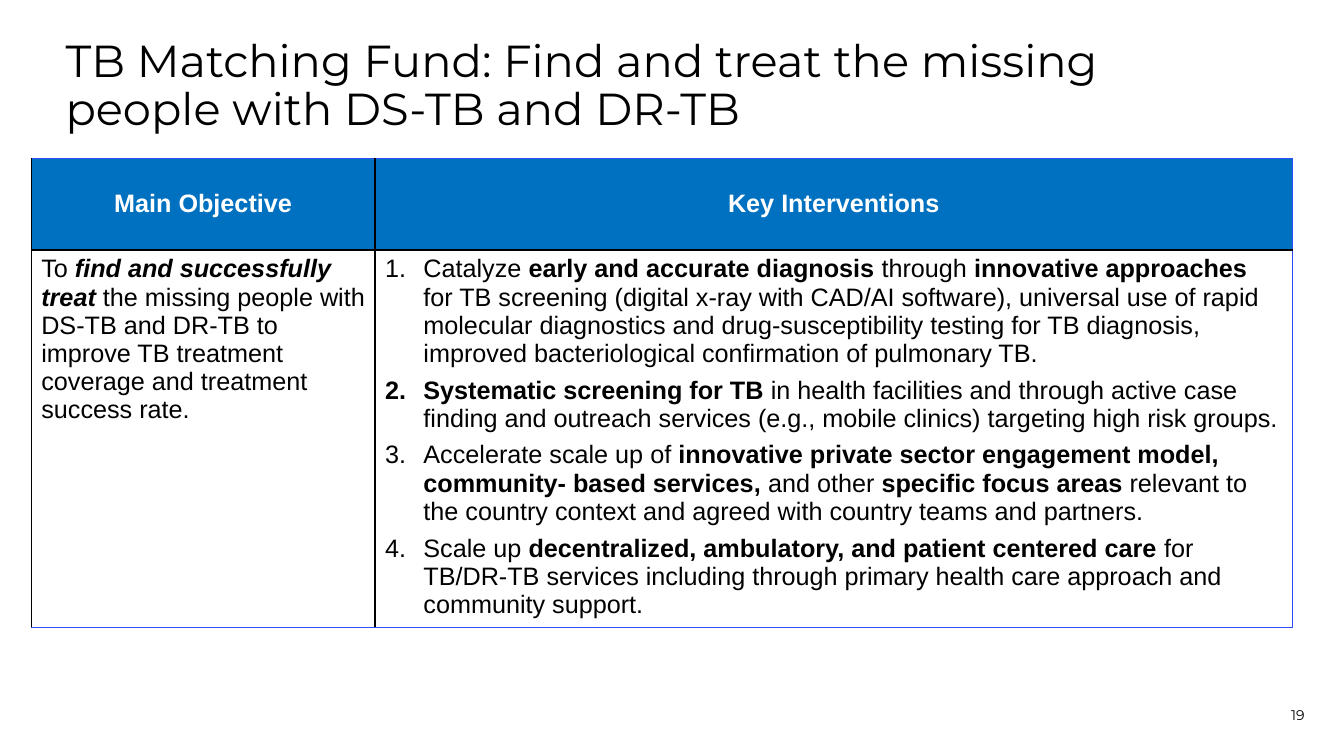
from dataclasses import dataclass

from lxml import etree
from pptx import Presentation
from pptx.dml.color import RGBColor
from pptx.enum import text as tx
from pptx.oxml import ns
from pptx.util import Inches, Pt

HUES = {"black": "000000", "white": "FFFFFF", "head": "0070C0", "edge": "2E4DF9"}
COLS = (3.41, 9.1)
ROWS = (0.91, 3.74)
SIDES = ("lnL", "lnR", "lnT", "lnB")


@dataclass
class Entry:
    row: int
    col: int
    lines: tuple[str, ...]
    edges: tuple[str, str, str, str]
    head: bool = False
    slant: bool = False
    listed: bool = False


ENTRIES = (
    Entry(0, 0, ("|Main Objective",), ("black", "black", "edge", "black"), head=True),
    Entry(0, 1, ("|Key Interventions",), ("black", "edge", "edge", "black"), head=True),
    Entry(1, 0, (
        "To |find and successfully treat |the missing people with DS-TB and DR-TB "
        "to improve TB treatment coverage and treatment success rate.",
    ), ("black", "black", "black", "edge"), slant=True),
    Entry(1, 1, (
        "Catalyze |early and accurate diagnosis |through |innovative approaches| for TB "
        "screening (digital x-ray with CAD/AI software), universal use of rapid molecular "
        "diagnostics and drug-susceptibility testing for TB diagnosis, improved "
        "bacteriological confirmation of pulmonary TB.",
        "|Systematic screening for TB |in health facilities and through active case finding "
        "and outreach services (e.g., mobile clinics) targeting high risk groups.",
        "Accelerate scale up of |innovative private sector engagement model, community- "
        "based services, |and other |specific focus areas |relevant to the country context "
        "and agreed with country teams and partners.",
        "Scale up |decentralized, ambulatory, and patient centered care |for TB/DR-TB "
        "services including through primary health care approach and community support.",
    ), ("black", "edge", "black", "edge"), listed=True),
)


def write(para, words: str, *, size: float = 18, face: str = "Arial", hue: str = "black",
          align=tx.PP_ALIGN.LEFT, slant: bool = False) -> None:
    para.alignment = align
    for spot, part in enumerate(words.split("|")):
        if part:
            run = para.add_run()
            run.text = part
            font = run.font
            font.name, font.size = face, Pt(size)
            font.color.rgb = RGBColor.from_string(HUES[hue])
            font.bold = spot % 2 == 1
            font.italic = slant and spot % 2 == 1


def number(para) -> None:
    para.space_after = Pt(6)
    props = para._p.get_or_add_pPr()
    props.set("marL", str(Inches(0.38)))
    props.set("indent", str(-Inches(0.38)))
    etree.SubElement(props, ns.qn("a:buFont"), typeface="+mj-lt")
    etree.SubElement(props, ns.qn("a:buAutoNum"), type="arabicPeriod")


def border(cell, edges: tuple[str, str, str, str]) -> None:
    props = cell._tc.get_or_add_tcPr()
    for side, hue in zip(SIDES, edges):
        width = Pt(1 if hue == "black" else 0.5)
        line = etree.SubElement(props, ns.qn(f"a:{side}"), w=str(width))
        fill = etree.SubElement(line, ns.qn("a:solidFill"))
        etree.SubElement(fill, ns.qn("a:srgbClr"), val=HUES[hue])


def draw(table, entry: Entry) -> None:
    cell = table.cell(entry.row, entry.col)
    border(cell, entry.edges)
    cell.fill.solid()
    cell.fill.fore_color.rgb = RGBColor.from_string(HUES["head" if entry.head else "white"])
    cell.vertical_anchor = tx.MSO_ANCHOR.MIDDLE if entry.head else tx.MSO_ANCHOR.TOP
    frame = cell.text_frame
    for spot, line in enumerate(entry.lines):
        para = frame.add_paragraph() if spot else frame.paragraphs[0]
        if entry.listed:
            number(para)
        write(para, line, hue="white" if entry.head else "black", slant=entry.slant,
              align=tx.PP_ALIGN.CENTER if entry.head else tx.PP_ALIGN.LEFT)


def setup(shape, anchor):
    frame = shape.text_frame
    frame.word_wrap = True
    frame.auto_size = tx.MSO_AUTO_SIZE.NONE
    frame.vertical_anchor = anchor
    frame.margin_left = frame.margin_top = frame.margin_right = frame.margin_bottom = 0
    return frame.paragraphs[0]


def main() -> None:
    deck = Presentation()
    deck.slide_width, deck.slide_height = Inches(13.33), Inches(7.5)
    slide = deck.slides.add_slide(deck.slide_layouts[5])

    title = slide.shapes.title
    title.left, title.top = Inches(0.65), Inches(0.38)
    title.width, title.height = Inches(11.9), Inches(0.62)
    para = setup(title, tx.MSO_ANCHOR.TOP)
    para.line_spacing = 0.9
    write(para, "TB Matching Fund: Find and treat the missing people with DS-TB and DR-TB",
          size=32, face="Montserrat")

    page = slide.shapes.add_textbox(Inches(11.96), Inches(6.78), Inches(0.98), Inches(0.4))
    write(setup(page, tx.MSO_ANCHOR.BOTTOM), "19", size=10, face="Montserrat",
          align=tx.PP_ALIGN.RIGHT)

    table = slide.shapes.add_table(len(ROWS), len(COLS), Inches(0.31), Inches(1.57),
                                   Inches(sum(COLS)), Inches(sum(ROWS))).table
    table.horz_banding = False
    for col, width in zip(table.columns, COLS):
        col.width = Inches(width)
    for row, height in zip(table.rows, ROWS):
        row.height = Inches(height)
    for entry in ENTRIES:
        draw(table, entry)

    deck.save("out.pptx")


if __name__ == "__main__":
    main()
